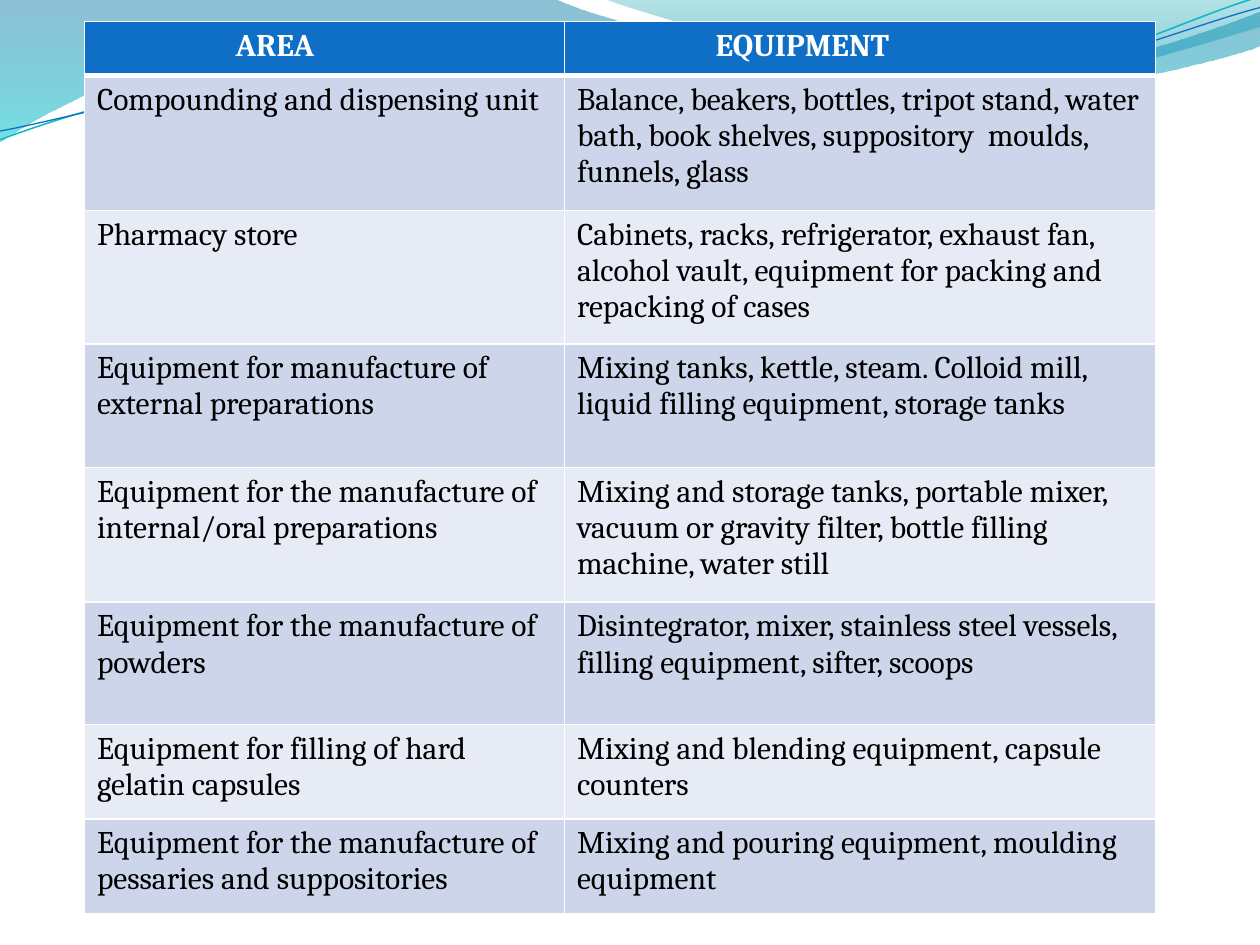
import math

from lxml import etree
from pptx import Presentation, util as u
from pptx.dml.color import RGBColor
from pptx.oxml.ns import qn

COLORS = {
    "header": "0F6FC6", "odd": "CCD5EA", "even": "E7EBF5",
    "white": "FFFFFF", "black": "000000",
    "deep": "0074A1", "aqua": "00C6CF", "sea": "00A1A9", "sky": "008BBF",
    "teal line": "0AB8BF", "blue line": "0F6FC6",
}
FONT = "Cambria"
HEADINGS = ("AREA", "EQUIPMENT")
EQUIPMENT_BY_AREA = [
    ("Compounding and dispensing unit",
     "Balance, beakers, bottles, tripot stand, water bath, book shelves, "
     "suppository  moulds, funnels, glass"),
    ("Pharmacy store",
     "Cabinets, racks, refrigerator, exhaust fan, alcohol vault, "
     "equipment for packing and repacking of cases"),
    ("Equipment for manufacture of external preparations",
     "Mixing tanks, kettle, steam. Colloid mill, liquid filling equipment, "
     "storage tanks"),
    ("Equipment for the manufacture of internal/oral preparations",
     "Mixing and storage tanks, portable mixer, vacuum or gravity filter, "
     "bottle filling machine, water still"),
    ("Equipment for the manufacture of powders",
     "Disintegrator, mixer, stainless steel vessels, filling equipment, "
     "sifter, scoops"),
    ("Equipment for filling of hard gelatin capsules",
     "Mixing and blending equipment, capsule counters"),
    ("Equipment for the manufacture of pessaries and suppositories",
     "Mixing and pouring equipment, moulding equipment"),
]
COLUMN_WIDTHS = (3.81, 4.69)
ROW_HEIGHTS = (0.43, 1.07, 1.06, 0.98, 1.07, 0.97, 0.75, 0.75)
CURVE_TILT = 357.3

# An outline is a list of points (2 numbers) and Bézier curves (6 numbers).
LEFT_WAVE = [
    (0, 0), (4.4, -0.01), (4.76, 0.17, 6.64, 0.63, 7.58, 0.63),
    (8.53, 0.63, 9.58, 0.26, 10, 0.09), (10.01, 0.36),
    (9.83, 0.44, 8.7, 0.76, 7.46, 0.75), (6.22, 0.75, 3.82, 0.28, 2.57, 0.34),
    (1.29, 0.36, 0.46, 0.83, -0.01, 1.13), (0, 0),
]
RIGHT_WAVE = [
    (4.79, -0.01), (5.09, 0.11, 6.82, 0.62, 7.69, 0.65),
    (8.56, 0.69, 9.61, 0.32, 10, 0.21), (10, 0), (4.79, -0.01),
]
TEAL_CURVE = [
    (0, 1.11), (0.48, 0.93, 1.58, 0.57, 2.77, 0.52),
    (3.95, 0.47, 5.93, 0.89, 7.13, 0.8), (8.33, 0.71, 9.38, 0.15, 9.98, -0.02),
]
BLUE_CURVE = [
    (0, 1.04), (0.47, 0.96, 1.64, 0.61, 2.83, 0.56),
    (4.03, 0.51, 5.97, 0.84, 7.17, 0.75), (8.36, 0.67, 9.41, 0.21, 10, 0.06),
]


def rgb(name):
    return RGBColor.from_string(COLORS[name])


def points_in(segment):
    return list(zip(segment[::2], segment[1::2]))


def to_frame(point, frame, rotation):
    """Give a page point in EMU from the corner of a frame before it is rotated."""
    left, top, width, height = frame
    dx, dy = point[0] - left - width / 2, point[1] - top - height / 2
    angle = math.radians(-rotation)
    x = dx * math.cos(angle) - dy * math.sin(angle) + width / 2
    y = dx * math.sin(angle) + dy * math.cos(angle) + height / 2
    return u.Inches(x), u.Inches(y)


def write(cell, content, color="black", size=18, bold=False, indent=0):
    paragraph = cell.text_frame.paragraphs[0]
    if indent:
        paragraph._p.get_or_add_pPr().set("marL", str(u.Inches(indent)))
    run = paragraph.add_run()
    run.text = content
    font = run.font
    font.name, font.size, font.bold = FONT, u.Pt(size), bold
    font.color.rgb = rgb(color)


def set_borders(cell, color="white", **widths):
    """Draw the cell's borders; widths are points by side: L, R, T, B."""
    properties = cell._tc.get_or_add_tcPr()
    for side in "LRTB":
        line = etree.SubElement(properties, qn(f"a:ln{side}"),
                                w=str(u.Pt(widths.get(side, 1))))
        fill = etree.SubElement(line, qn("a:solidFill"))
        etree.SubElement(fill, qn("a:srgbClr"), val=COLORS[color])


class SlideBuilder:
    def __init__(self, presentation):
        self.slide = presentation.slides.add_slide(presentation.slide_layouts[6])

    def outline(self, segments, frame, close, rotation=0):
        """Build a freeform in its frame, with true Bézier segments."""
        corners = [to_frame(points_in(segment)[-1], frame, rotation) for segment in segments]
        builder = self.slide.shapes.build_freeform(*corners[0])
        builder.add_line_segments(corners[1:], close=close)
        shape = builder.convert_to_shape()
        shape.shadow.inherit = False
        shape.left, shape.top, shape.width, shape.height = map(u.Inches, frame)
        shape.rotation = rotation

        track = next(shape._element.iter(qn("a:path")))
        track.set("w", str(shape.width))
        track.set("h", str(shape.height))
        for step, segment in zip(list(track), segments):
            if len(segment) == 6:
                step.tag = qn("a:cubicBezTo")
            for old in list(step):
                step.remove(old)
            for point in points_in(segment):
                x, y = to_frame(point, frame, rotation)
                etree.SubElement(step, qn("a:pt"), x=str(x), y=str(y))
        return shape

    def wave(self, segments, frame, stops):
        """Fill a closed outline top to bottom; stops are (position, color, opacity %)."""
        shape = self.outline(segments, frame, close=True)
        shape.line.fill.background()
        shape.fill.gradient()
        shape.fill.gradient_angle = 270
        for stop, (position, color, _) in zip(shape.fill.gradient_stops, stops):
            stop.position = position
            stop.color.rgb = rgb(color)
        tints = shape._element.spPr.iter(qn("a:srgbClr"))
        for tint, (_, _, opacity) in zip(list(tints), stops):
            etree.SubElement(tint, qn("a:alpha"), val=str(opacity * 1000))

    def curve(self, segments, frame, color, width):
        shape = self.outline(segments, frame, close=False, rotation=CURVE_TILT)
        shape.fill.background()
        shape.line.color.rgb = rgb(color)
        shape.line.width = u.Pt(width)

    def table(self, left, top):
        rows = [HEADINGS, *EQUIPMENT_BY_AREA]
        table = self.slide.shapes.add_table(
            len(rows), len(HEADINGS), u.Inches(left), u.Inches(top),
            u.Inches(sum(COLUMN_WIDTHS)), u.Inches(sum(ROW_HEIGHTS))).table
        for column, width in zip(table.columns, COLUMN_WIDTHS):
            column.width = u.Inches(width)
        for index, (row, height, entries) in enumerate(zip(table.rows, ROW_HEIGHTS, rows)):
            row.height = u.Inches(height)
            for cell, entry in zip(row.cells, entries):
                if index == 0:
                    write(cell, entry, color="white", bold=True, indent=1.1)
                    set_borders(cell, B=3)
                    shade = "header"
                else:
                    write(cell, entry)
                    set_borders(cell, T=3 if index == 1 else 1)
                    shade = "odd" if index % 2 else "even"
                cell.fill.solid()
                cell.fill.fore_color.rgb = rgb(shade)


def main():
    presentation = Presentation()
    presentation.slide_width, presentation.slide_height = u.Inches(10), u.Inches(7.5)
    builder = SlideBuilder(presentation)
    builder.wave(LEFT_WAVE, (-0.01, -0.01, 10.02, 1.14),
                 [(0, "deep", 45), (1, "aqua", 55)])
    builder.wave(RIGHT_WAVE, (4.79, -0.01, 5.21, 0.7),
                 [(0, "sea", 30), (0.8, "sky", 45)])
    builder.curve(TEAL_CURVE, (-0.02, 0.22, 10.02, 0.71), "teal line", 0.85)
    builder.curve(BLUE_CURVE, (-0.02, 0.3, 10.03, 0.58), "blue line", 0.75)
    builder.table(0.67, 0.17)
    presentation.save("out.pptx")


if __name__ == "__main__":
    main()
